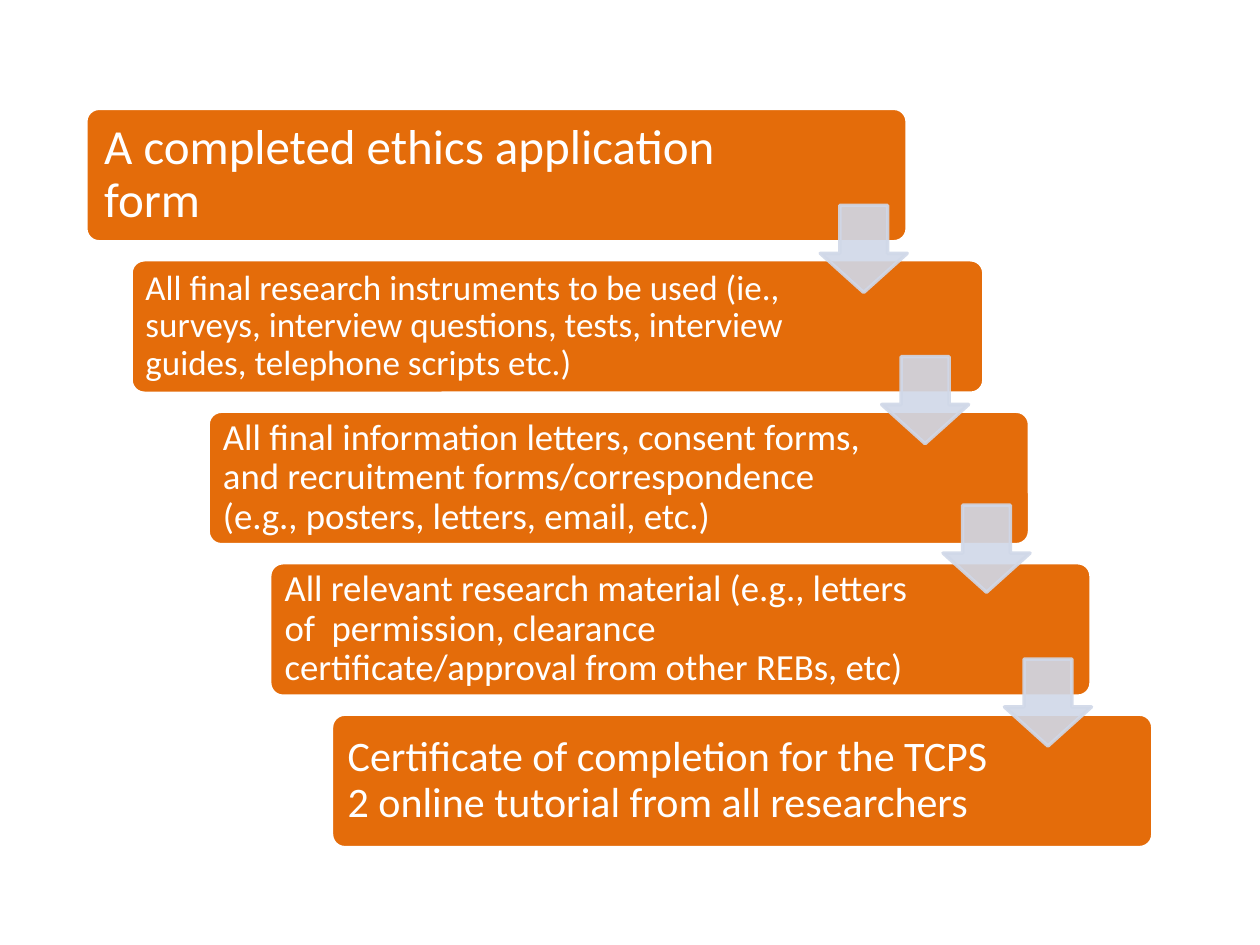
"""Build a slide of five cascading ethics requirements joined by down arrows."""
from typing import NamedTuple

from lxml import etree
from pptx import Presentation
from pptx.dml.color import RGBColor
from pptx.enum.shapes import MSO_SHAPE
from pptx.enum.text import MSO_ANCHOR, PP_ALIGN
from pptx.oxml.ns import qn
from pptx.util import Pt

ROUNDED = MSO_SHAPE.ROUNDED_RECTANGLE
DOWN_ARROW = MSO_SHAPE.DOWN_ARROW
MIDDLE = MSO_ANCHOR.MIDDLE
LEFT = PP_ALIGN.LEFT

ORANGE = RGBColor(0xE4, 0x6C, 0x0A)
WHITE = RGBColor(0xFF, 0xFF, 0xFF)
PALE_BLUE = RGBColor(0xD0, 0xD8, 0xE8)

FONT = "Calibri"
TOP, PITCH, STEP_H, PAD = 61.9, 86.55, 76.3, 2.2
ARROW_LEFT, ARROW_SHIFT, ARROW_SIZE = 468.7, 35.1, 49.7
ARROW_TOPS = (117.4, 203.8, 288.7, 376.6)


class Step(NamedTuple):
    left: float
    width: float
    text_width: float
    size: float
    text: str


STEPS = (
    Step(49, 469.4, 378.7, 28, "A completed ethics application form"),
    Step(74.9, 487.4, 395.3, 20,
         "All final research instruments to be used (ie., surveys, interview "
         "questions, tests, interview guides, telephone scripts etc.)"),
    Step(118.9, 469.4, 380.2, 21,
         "All final information letters, consent forms, and recruitment "
         "forms/correspondence (e.g., posters, letters, email, etc.)"),
    Step(154.1, 469.4, 380.2, 21,
         "All relevant research material (e.g., letters of  permission, "
         "clearance certificate/approval from other REBs, etc)"),
    Step(189.4, 469.4, 380.2, 24,
         "Certificate of completion for the TCPS 2 online tutorial "
         "from all researchers"),
)


def add_shape(slide, kind, left: float, top: float, width: float, height: float,
              adj: tuple, fill: RGBColor, line: RGBColor):
    sp = slide.shapes.add_shape(kind, Pt(left), Pt(top), Pt(width), Pt(height))
    for i, value in enumerate(adj):
        sp.adjustments[i] = value
    sp.shadow.inherit = False
    sp.fill.solid()
    sp.fill.fore_color.rgb = fill
    sp.line.color.rgb = line
    sp.line.width = Pt(2)
    return sp


def add_text(slide, text: str, *, left: float, top: float, width: float,
             height: float, size: float, inset: float) -> None:
    sp = slide.shapes.add_textbox(Pt(left), Pt(top), Pt(width), Pt(height))
    tf = sp.text_frame
    tf.word_wrap = True
    tf.vertical_anchor = MIDDLE
    tf.margin_left = tf.margin_right = Pt(inset)
    tf.margin_top = tf.margin_bottom = Pt(inset)
    p = tf.paragraphs[0]
    p.alignment = LEFT
    p.line_spacing = 0.9
    r = p.add_run()
    r.text = text
    r.font.name = FONT
    r.font.size = Pt(size)
    r.font.color.rgb = WHITE


def add_step(slide, step: Step, top: float) -> None:
    add_shape(slide, ROUNDED, step.left, top, step.width, STEP_H,
              (0.1,), ORANGE, WHITE)
    add_text(slide, step.text, left=step.left + PAD, top=top + PAD,
             width=step.text_width, height=STEP_H - 2 * PAD,
             size=step.size, inset=round(0.3 * step.size, 2))


def add_arrow(slide, left: float, top: float) -> None:
    sp = add_shape(slide, DOWN_ARROW, left, top, ARROW_SIZE, ARROW_SIZE,
                   (0.55, 0.45), PALE_BLUE, PALE_BLUE)
    for color in sp._element.spPr.iter(qn("a:srgbClr")):
        etree.SubElement(color, qn("a:alpha"), val="90000")


def main() -> None:
    prs = Presentation()
    prs.slide_width, prs.slide_height = Pt(720), Pt(540)
    slide = prs.slides.add_slide(prs.slide_layouts[6])
    for i, step in enumerate(STEPS):
        add_step(slide, step, TOP + i * PITCH)
    for i, top in enumerate(ARROW_TOPS):
        add_arrow(slide, ARROW_LEFT + i * ARROW_SHIFT, top)
    prs.save("out.pptx")


if __name__ == "__main__":
    main()
